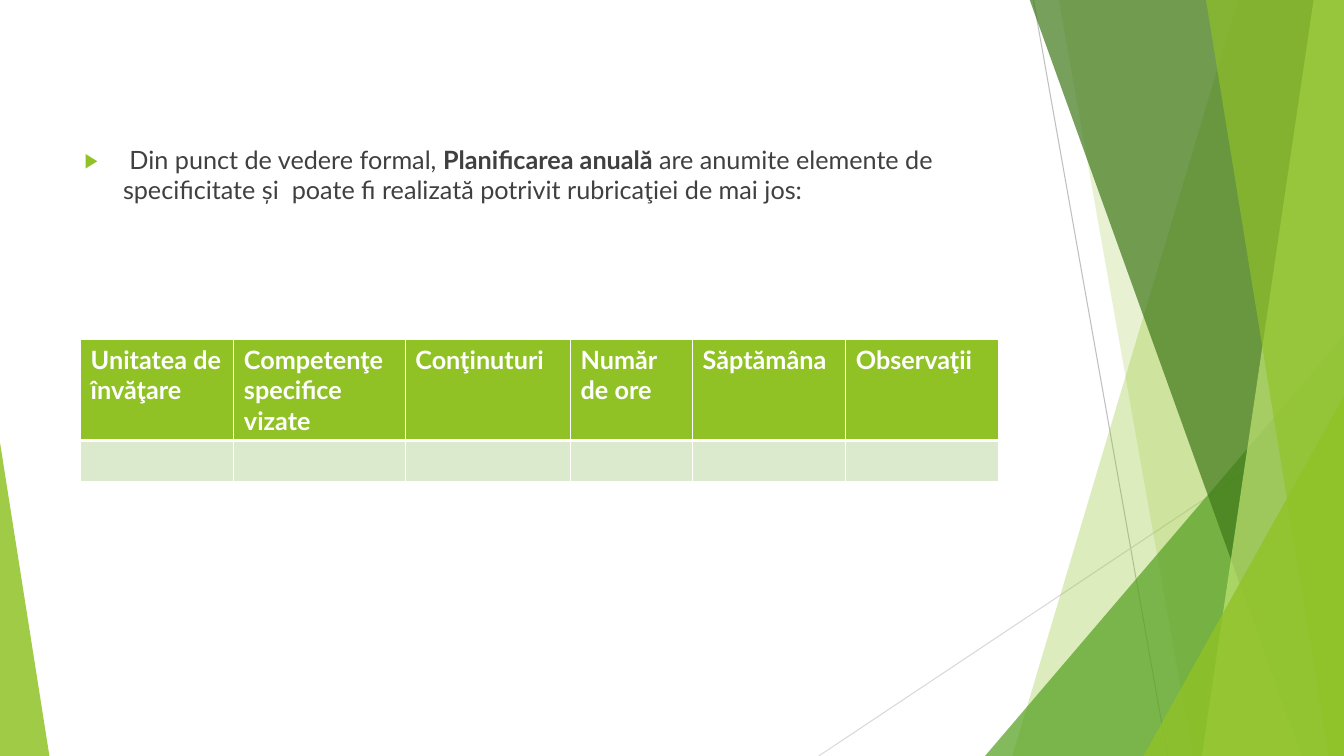
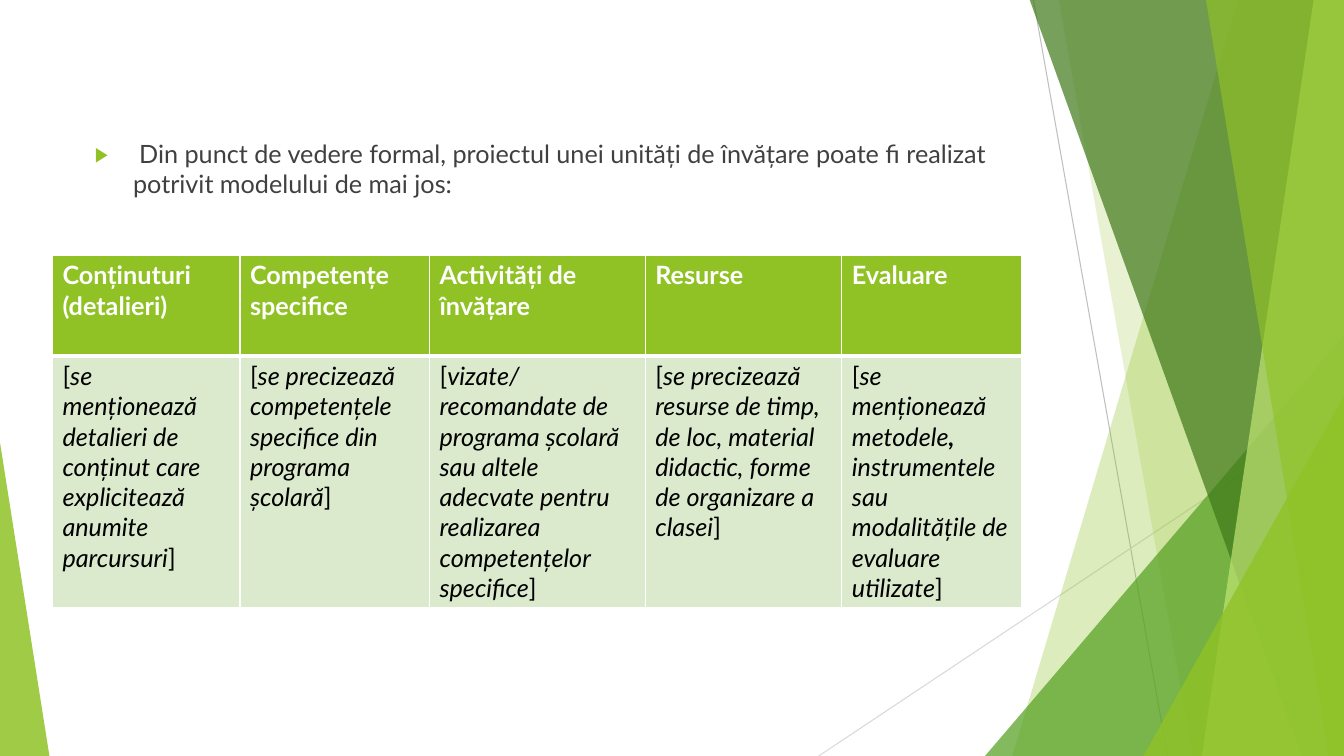
from lxml import etree
from pptx import Presentation
from pptx.dml.color import RGBColor
from pptx.enum import shapes, text
from pptx.oxml import ns
from pptx.util import Inches, Pt

FONT = "Lato"
WIDTH, HEIGHT = 13.33, 7.5
COLORS = {
    "white": "FFFFFF",
    "black": "000000",
    "body": "404040",
    "lime": "90C226",
    "pale": "C0E474",
    "green": "54A021",
    "forest": "3F7819",
    "cell": "DBE9CD",
    "gray": "BFBFBF",
    "light_gray": "D9D9D9",
}


def rgb(name):
    return RGBColor.from_string(COLORS[name])


def sub(parent, tag, **attrs):
    el = etree.SubElement(parent, ns.qn(tag))
    for key, value in attrs.items():
        el.set(key, str(value))
    return el


def add_run(p, content, color="body", bold=False, italic=False, size=18):
    r = p.add_run()
    r.text = content
    r.font.name = FONT
    r.font.size = Pt(size)
    r.font.bold = bold
    r.font.italic = italic
    r.font.color.rgb = rgb(color)


def paint(sp, color, opacity):
    sp.shadow.inherit = False
    sp.line.fill.background()
    sp.fill.solid()
    sp.fill.fore_color.rgb = rgb(color)
    clr = sp.fill._xPr.find(".//" + ns.qn("a:srgbClr"))
    sub(clr, "a:alpha", val=opacity * 1000)


def add_band(slide, top_x, bottom_x, color, opacity):
    points = [(WIDTH, -0.01), (WIDTH, HEIGHT), (bottom_x, HEIGHT)]
    builder = slide.shapes.build_freeform(Inches(top_x), Inches(-0.01))
    builder.add_line_segments([(Inches(x), Inches(y)) for x, y in points], close=True)
    paint(builder.convert_to_shape(), color, opacity)


def add_triangle(slide, left, top, width, apex, color, opacity):
    sp = slide.shapes.add_shape(
        shapes.MSO_SHAPE.ISOSCELES_TRIANGLE,
        Inches(left), Inches(top), Inches(width), Inches(HEIGHT - top))
    sp.adjustments[0] = apex
    paint(sp, color, opacity)


def add_line(slide, start, end, color):
    line = slide.shapes.add_connector(
        shapes.MSO_CONNECTOR.STRAIGHT, *(Inches(v) for v in start + end))
    line.line.color.rgb = rgb(color)
    line.line.width = Pt(0.75)
    sub(line._element.spPr, "a:effectLst")


def decorate_layout(layout, slide):
    existing = {sp.shape_id for sp in slide.shapes}
    add_line(slide, (10.25, 0), (11.58, HEIGHT), "gray")
    add_line(slide, (WIDTH, 4.03), (8.12, HEIGHT), "light_gray")
    add_band(slide, 12.28, 10.04, "lime", 30)
    add_band(slide, 10.5, 11.83, "lime", 20)
    add_triangle(slide, 9.77, 3.33, 3.56, 1, "green", 72)
    add_band(slide, 10.21, 12.91, "forest", 70)
    add_band(slide, 13.03, 11.92, "pale", 70)
    add_band(slide, 11.96, 13.18, "lime", 65)
    add_triangle(slide, 11.34, 3.93, 1.99, 1, "lime", 80)
    add_triangle(slide, 0, 4.39, 0.49, 0, "lime", 85)
    decor = [sp for sp in slide.shapes if sp.shape_id not in existing]
    for number, sp in enumerate(decor, 101):
        sp._element.find(".//" + ns.qn("p:cNvPr")).set("id", str(number))
        layout.shapes._spTree.append(sp._element)


def add_slide(prs, layout):
    slide = prs.slides.add_slide(layout)
    title = slide.shapes.title._element
    title.getparent().remove(title)
    return slide


def fill_body(slide, box, runs):
    body = slide.placeholders[1]
    body.left, body.top, body.width, body.height = (Inches(v) for v in box)
    tf = body.text_frame
    tf.word_wrap = True
    tf.auto_size = text.MSO_AUTO_SIZE.NONE
    p = tf.paragraphs[0]
    p.space_before = Pt(10)
    pPr = p._p.get_or_add_pPr()
    indent = Inches(0.38)
    pPr.set("marL", str(indent))
    pPr.set("indent", str(-indent))
    sub(sub(pPr, "a:buClr"), "a:srgbClr", val=COLORS["lime"])
    sub(pPr, "a:buSzPct", val=80000)
    sub(pPr, "a:buFont", typeface=FONT)
    sub(pPr, "a:buChar", char="▶")
    for content, fmt in runs:
        add_run(p, content, **fmt)


def format_cell(cell, is_header):
    widths = {"L": 1, "R": 1, "T": 1 if is_header else 3, "B": 3 if is_header else 1}
    tcPr = cell._tc.get_or_add_tcPr()
    for side, width in widths.items():
        ln = sub(tcPr, "a:ln" + side, w=Pt(width))
        sub(sub(ln, "a:solidFill"), "a:srgbClr", val=COLORS["white"])
    cell.fill.solid()
    cell.fill.fore_color.rgb = rgb("lime" if is_header else "cell")


def add_grid(slide, left, top, col_widths, row_heights, headers, details):
    table = slide.shapes.add_table(
        2, len(headers), Inches(left), Inches(top),
        Inches(sum(col_widths)), Inches(sum(row_heights))).table
    for col, width in zip(table.columns, col_widths):
        col.width = Inches(width)
    for row, height in zip(table.rows, row_heights):
        row.height = Inches(height)
    for i, (header, runs) in enumerate(zip(headers, details)):
        head, detail = table.cell(0, i), table.cell(1, i)
        format_cell(head, True)
        format_cell(detail, False)
        tf = head.text_frame
        for n, part in enumerate(header.split("\n")):
            p = tf.add_paragraph() if n else tf.paragraphs[0]
            add_run(p, part, color="white", bold=True)
        for content, fmt in runs:
            add_run(detail.text_frame.paragraphs[0], content, color="black", **fmt)


def bracketed(*parts):
    italics = [(part, {"italic": True, "bold": part == ", "}) for part in parts]
    return [("[", {}), *italics, ("]", {})]


def main():
    prs = Presentation()
    prs.slide_width, prs.slide_height = Inches(WIDTH), Inches(HEIGHT)
    layout = prs.slide_layouts[1]

    annual = add_slide(prs, layout)
    decorate_layout(layout, annual)
    fill_body(annual, (0.74, 1.38, 9.4, 5.23), [
        (" Din punct de vedere formal, ", {}),
        ("Planificarea anuală ", {"bold": True}),
        ("are anumite elemente de specificitate și  poate fi realizată potrivit "
         "rubricaţiei de mai jos:", {}),
    ])
    headers = ["Unitatea de învăţare", "Competenţe specifice vizate", "Conţinuturi",
               "Număr de ore", "Săptămâna", "Observaţii"]
    add_grid(annual, 0.8, 3.37, [1.52, 1.7, 1.64, 1.21, 1.52, 1.52], [1, 0.39],
             headers, [[] for _ in headers])

    unit = add_slide(prs, layout)
    fill_body(unit, (0.84, 1.32, 9.31, 1.92), [
        (" ", {"bold": True}),
        ("Din punct de vedere formal, proiectul unei unități de învățare poate fi "
         "realizat potrivit modelului de mai jos:", {}),
    ])
    add_grid(
        unit, 0.52, 2.53, [1.86, 1.88, 2.14, 1.95, 1.78], [1, 2.5],
        ["Conținuturi\n(detalieri)", "Competențe specifice", "Activități de învățare",
         "Resurse", "Evaluare"],
        [
            bracketed("se menționează detalieri de conținut care explicitează "
                      "anumite parcursuri"),
            bracketed("se precizează competențele specifice din programa școlară"),
            bracketed("vizate/recomandate de programa școlară sau altele adecvate "
                      "pentru realizarea competențelor specifice"),
            bracketed("se precizează resurse de timp, de loc, material didactic, "
                      "forme de organizare a clasei"),
            bracketed("se menționează metodele", ", ",
                      "instrumentele sau modalitățile de evaluare utilizate"),
        ])
    prs.save("out.pptx")


if __name__ == "__main__":
    main()
